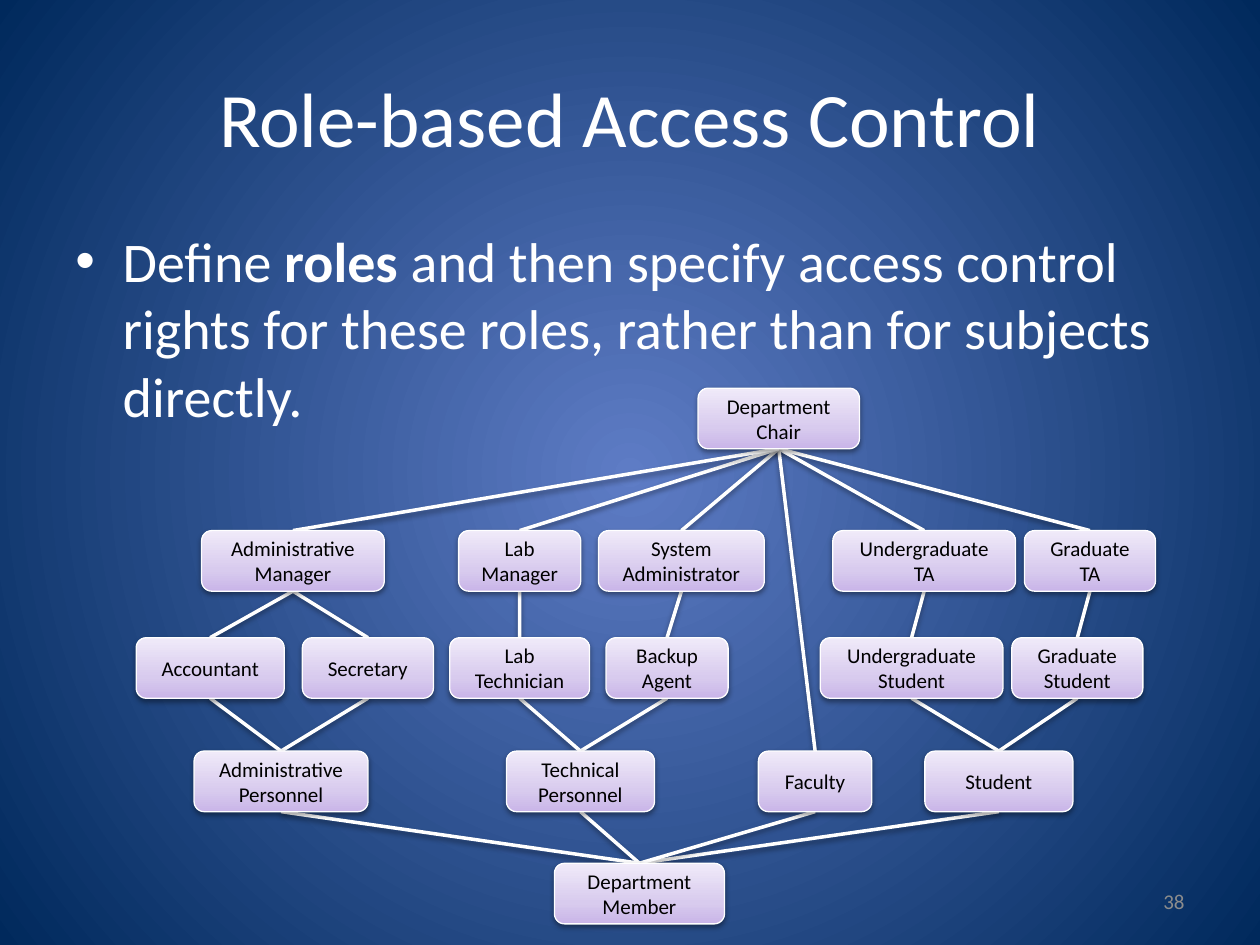
from lxml.etree import SubElement
from pptx import Presentation
from pptx.dml.color import RGBColor
from pptx.enum.shapes import MSO_CONNECTOR as CXN, MSO_SHAPE as SHAPE
from pptx.enum.text import MSO_ANCHOR as ANCHOR, PP_ALIGN as ALIGN
from pptx.oxml.ns import qn
from pptx.util import Pt

WHITE = RGBColor(0xFF, 0xFF, 0xFF)
BLACK = RGBColor(0x00, 0x00, 0x00)
GRAY = RGBColor(0x8C, 0x8C, 0x8C)
BG_STOPS = [(0, RGBColor(0x5E, 0x7C, 0xC5)), (100, RGBColor(0x00, 0x29, 0x5C))]
ROLE_STOPS = [(0, RGBColor(0xC9, 0xB5, 0xE8)), (35, RGBColor(0xD8, 0xCB, 0xEE)),
              (100, RGBColor(0xF0, 0xEA, 0xF9))]

ROLE_H = 34.6
ROLE_ROWS = [
    (0, [("Department Chair", 321.1, 92.2)]),
    (81.4, [("Administrative Manager", 37.4, 104.4), ("Lab Manager", 184.3, 69.8),
            ("System Administrator", 264.2, 94.8), ("Undergraduate TA", 398.1, 104.4),
            ("Graduate TA", 507.6, 74.9)]),
    (142.6, [("Accountant", 0, 84.6), ("Secretary", 95, 74.9),
             ("Lab Technician", 179.2, 79.9), ("Backup Agent", 268.5, 69.8),
             ("Undergraduate Student", 390.9, 104.4), ("Graduate Student", 500.4, 74.9)]),
    (207.4, [("Administrative Personnel", 33.1, 99.4), ("Technical Personnel", 211.6, 84.6),
             ("Faculty", 355.6, 64.8), ("Student", 450.7, 84.6)]),
    (271.5, [("Department Member", 239, 97.2)]),
]
JUNIORS = {
    "Department Chair": ["Administrative Manager", "Lab Manager", "System Administrator",
                         "Faculty", "Undergraduate TA", "Graduate TA"],
    "Administrative Manager": ["Accountant", "Secretary"],
    "Lab Manager": ["Lab Technician"],
    "System Administrator": ["Backup Agent"],
    "Undergraduate TA": ["Undergraduate Student"],
    "Graduate TA": ["Graduate Student"],
    "Accountant": ["Administrative Personnel"],
    "Secretary": ["Administrative Personnel"],
    "Lab Technician": ["Technical Personnel"],
    "Backup Agent": ["Technical Personnel"],
    "Undergraduate Student": ["Student"],
    "Graduate Student": ["Student"],
    "Administrative Personnel": ["Department Member"],
    "Technical Personnel": ["Department Member"],
    "Faculty": ["Department Member"],
    "Student": ["Department Member"],
}


def set_gradient(fill, owner, stops, radial=False):
    """Fill with a radial gradient or one that runs from bottom to top."""
    fill.gradient()
    grad = owner.xpath(".//a:gradFill")[0]
    for child in list(grad):
        grad.remove(child)
    gs_lst = SubElement(grad, qn("a:gsLst"))
    for pos, color in stops:
        gs = SubElement(gs_lst, qn("a:gs"), pos=str(pos * 1000))
        SubElement(gs, qn("a:srgbClr"), val=str(color))
    if radial:
        circle = SubElement(grad, qn("a:path"), path="circle")
        SubElement(circle, qn("a:fillToRect"), {side: "50000" for side in "ltrb"})
    else:
        SubElement(grad, qn("a:lin"), ang="16200000", scaled="0")


def add_shadow(shape):
    """Give a shape or connector a soft shadow below it."""
    effects = SubElement(shape._element.spPr, qn("a:effectLst"))
    shadow = SubElement(effects, qn("a:outerShdw"), blurRad=str(Pt(3.1)), dist=str(Pt(1.6)),
                        dir="5400000", rotWithShape="0")
    color = SubElement(shadow, qn("a:srgbClr"), val=str(BLACK))
    SubElement(color, qn("a:alpha"), val="38000")


def write_text(shape, runs, size, color, align=ALIGN.LEFT, anchor=ANCHOR.MIDDLE):
    """Write one paragraph of (text, bold) runs and return it."""
    tf = shape.text_frame
    tf.word_wrap, tf.vertical_anchor = True, anchor
    p = tf.paragraphs[0]
    p.alignment = align
    for text, bold in runs:
        r = p.add_run()
        r.text = text
        r.font.color.rgb = color
        for name, value in {"size": Pt(size), "name": "Calibri", "bold": bold}.items():
            setattr(r.font, name, value)
    return p


def add_label(s, box, text, size, color, align):
    """Place a single line of text in the box."""
    write_text(s.shapes.add_textbox(*map(Pt, box)), [(text, False)], size, color, align)


def add_body(s, box):
    """Place the bulleted definition in the box."""
    runs = [("Define ", False), ("roles ", True),
            ("and then specify access control rights for these roles, "
             "rather than for subjects directly.", False)]
    p = write_text(s.shapes.add_textbox(*map(Pt, box)), runs, 32, WHITE, anchor=ANCHOR.TOP)
    p.space_before = Pt(6.4)
    props = p._p.get_or_add_pPr()
    props.set("marL", str(Pt(27)))
    props.set("indent", str(Pt(-27)))
    SubElement(props, qn("a:buFont"), typeface="Arial")
    SubElement(props, qn("a:buChar"), char="•")


def add_role(group, box, text):
    """Place one role in the box and return its shape."""
    sp = group.shapes.add_shape(SHAPE.FLOWCHART_ALTERNATE_PROCESS, *map(Pt, box))
    set_gradient(sp.fill, sp._element, ROLE_STOPS)
    sp.line.color.rgb, sp.line.width = WHITE, Pt(0.75)
    add_shadow(sp)
    write_text(sp, [(text, False)], 12, BLACK, ALIGN.CENTER)
    return sp


def add_link(group, senior, junior):
    """Join a senior role to a junior one, behind all roles."""
    cxn = group.shapes.add_connector(CXN.STRAIGHT, senior.left, senior.top,
                                     junior.left, junior.top)
    cxn.begin_connect(senior, 2)
    cxn.end_connect(junior, 0)
    cxn.line.color.rgb, cxn.line.width = WHITE, Pt(2)
    add_shadow(cxn)
    group._element.insert(2, cxn._element)


def add_hierarchy(s, left, top):
    """Place the role hierarchy with its corner at left, top."""
    group = s.shapes.add_group_shape()
    roles = {name: add_role(group, (left + x, top + y, width, ROLE_H), name)
             for y, row in ROLE_ROWS for name, x, width in row}
    for senior, juniors in JUNIORS.items():
        for junior in juniors:
            add_link(group, roles[senior], roles[junior])


def main():
    """Build the slide and save it."""
    prs = Presentation()
    prs.slide_width, prs.slide_height = Pt(720), Pt(540)
    s = prs.slides.add_slide(prs.slide_layouts[6])
    set_gradient(s.background.fill, s._element, BG_STOPS, radial=True)
    add_label(s, (36, 21.6, 648, 90), "Role-based Access Control", 44, WHITE, ALIGN.CENTER)
    add_body(s, (36, 126, 648, 356.4))
    add_label(s, (516, 500.5, 168, 28.8), "38", 12, GRAY, ALIGN.RIGHT)
    add_hierarchy(s, 77.8, 221.8)
    prs.save("out.pptx")


if __name__ == "__main__":
    main()
